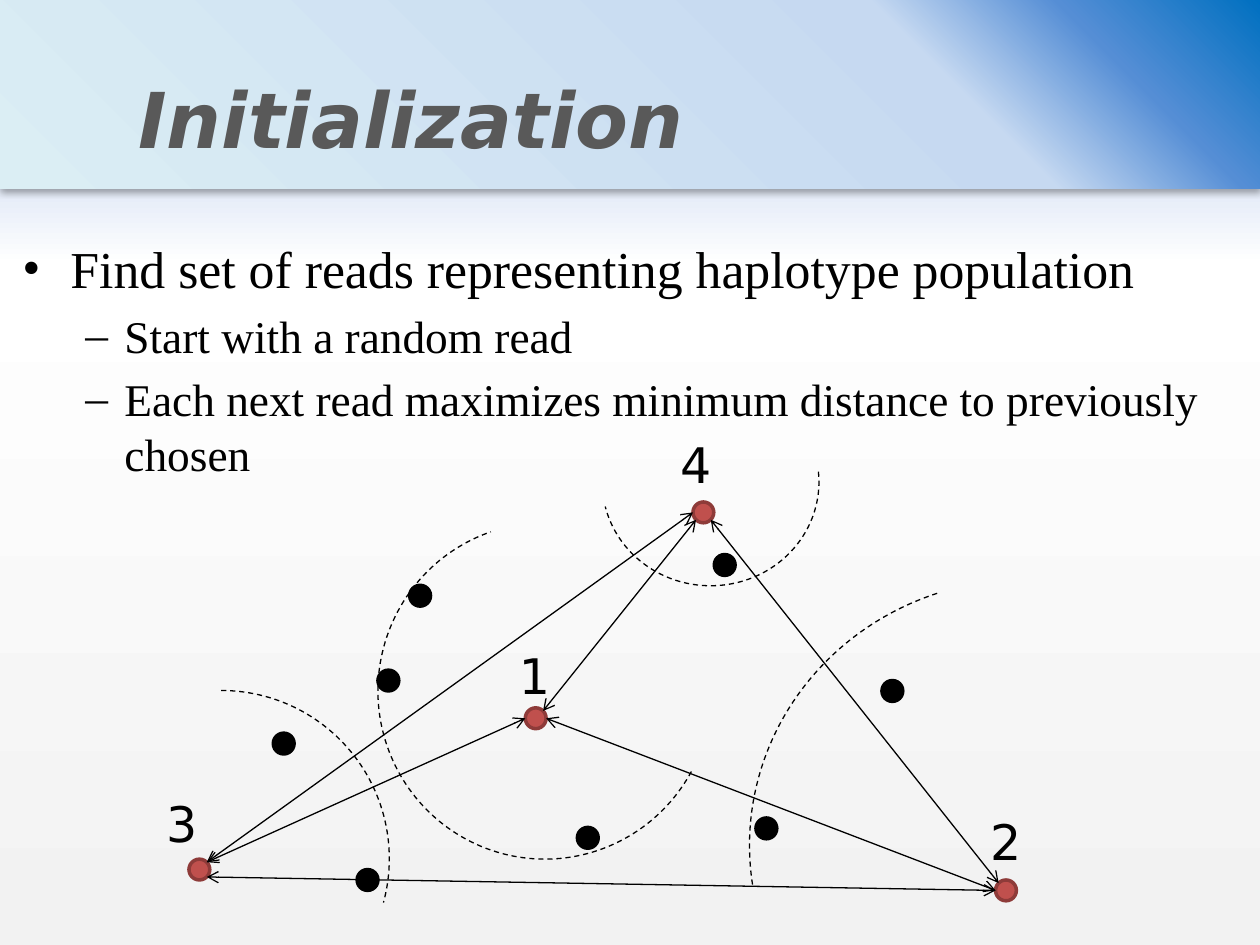
import math
from dataclasses import dataclass

import lxml.etree
import pptx
import pptx.dml.color
import pptx.enum.dml
import pptx.enum.shapes
import pptx.enum.text
import pptx.oxml.ns
import pptx.util

Cm = pptx.util.Cm
Pt = pptx.util.Pt
RGBColor = pptx.dml.color.RGBColor
Shape = pptx.enum.shapes.MSO_SHAPE
qn = pptx.oxml.ns.qn

BLACK = RGBColor(0x00, 0x00, 0x00)
GREY = RGBColor(0x59, 0x59, 0x59)
RED = RGBColor(0xC0, 0x50, 0x4D)
DARK_RED = RGBColor(0x8E, 0x3B, 0x39)
WHITE = RGBColor(0xFF, 0xFF, 0xFF)
PALE_GREY = RGBColor(0xF2, 0xF2, 0xF2)
SKY = RGBColor(0x9A, 0xB5, 0xE4)
DEEP_BLUE = RGBColor(0x00, 0x70, 0xC0)
MID_BLUE = RGBColor(0x55, 0x8E, 0xD5)
LIGHT_BLUE = RGBColor(0xC6, 0xD9, 0xF1)
PALE_BLUE = RGBColor(0xDB, 0xEE, 0xF4)
SANS = "DejaVu Sans"
SERIF = "Times New Roman"
RADIUS = 0.21

BULLETS = [
    ("Find set of reads representing haplotype population", "•", 29.6, 0.97, 0.97),
    ("Start with a random read", "–", 25.9, 2.06, 0.79),
    ("Each next read maximizes minimum distance to previously chosen", "–", 25.9, 2.06, 0.79),
]
CHOSEN = {1: (9.8, 6.88), 2: (19.28, 10.35), 3: (3.02, 9.93), 4: (13.18, 2.73)}
LABELS = {1: (9.21, 5.28), 2: (18.71, 8.63), 3: (2.1, 8.28), 4: (12.46, 1.04)}
READS = [(7.47, 4.41), (4.72, 7.39), (6.83, 6.12), (6.41, 10.14),
         (10.85, 9.29), (13.61, 3.79), (16.99, 6.33), (14.45, 9.1)]
ARCS = [
    (0.07, 6.32, 6.78, 6.78, 270, 15.15),
    (6.62, 2.94, 6.73, 6.78, 28.81, 251.25),
    (11.14, 0.02, 4.37, 4.19, 354.58, 166.81),
    (14.11, 4.08, 11.13, 10.72, 171.8, 251.25),
]
LINKS = [(1, 0, 2, 180), (3, -45, 1, 180), (3, 45, 2, 180),
         (1, -45, 4, 135), (2, -135, 4, 45), (3, -45, 4, 180)]


@dataclass
class Box:
    """A region of the page, in centimetres."""
    left: float
    top: float
    width: float
    height: float

    def inner(self, left, top, width, height):
        """Return the lengths of a part placed relative to this box."""
        return Cm(self.left + left), Cm(self.top + top), Cm(width), Cm(height)


def add_child(parent, tag, **attributes):
    """Append an XML element with the given attributes."""
    values = {key: str(value) for key, value in attributes.items()}
    return lxml.etree.SubElement(parent, qn(tag), values)


def set_gradient(fill, owner, stops, corner=False):
    """Fill with colour stops, downwards or out from the top right corner."""
    fill.gradient()
    gradient = next(owner.iter(qn("a:gradFill")))
    for child in list(gradient):
        gradient.remove(child)
    stop_list = add_child(gradient, "a:gsLst")
    for percent, color in stops:
        stop = add_child(stop_list, "a:gs", pos=percent * 1000)
        add_child(stop, "a:srgbClr", val=color)
    if corner:
        circle = add_child(gradient, "a:path", path="circle")
        add_child(circle, "a:fillToRect", l=100000, b=100000)
    else:
        add_child(gradient, "a:lin", ang=5400000, scaled=0)


def write_text(para, text, size, font, color=BLACK, bold=False, italic=False):
    """Add a formatted span of text to a paragraph."""
    span = para.add_run()
    span.text = text
    span.font.size = Pt(size)
    span.font.name = font
    span.font.color.rgb = color
    span.font.bold = bold
    span.font.italic = italic


def add_title(page, box):
    """Draw the title band with its gradient, shadow and heading."""
    band = page.shapes.add_shape(Shape.RECTANGLE, *box.inner(0, 0, box.width, box.height))
    set_gradient(band.fill, band.element, [
        (0, DEEP_BLUE), (14, MID_BLUE), (27, LIGHT_BLUE), (100, PALE_BLUE)], corner=True)
    band.line.fill.background()
    band.shadow.inherit = False
    effects = band.element.spPr.find(qn("a:effectLst"))
    shadow = add_child(effects, "a:outerShdw", blurRad=Pt(3.5), dist=Pt(2.2),
                       dir=5400000, algn="t", rotWithShape=0)
    color = add_child(shadow, "a:srgbClr", val=BLACK)
    add_child(color, "a:alpha", val=32000)
    frame = band.text_frame
    frame.margin_left = Cm(2.79)
    frame.vertical_anchor = pptx.enum.text.MSO_ANCHOR.MIDDLE
    para = frame.paragraphs[0]
    para.alignment = pptx.enum.text.PP_ALIGN.LEFT
    para.line_spacing = 1.5
    para.space_before = Pt(6)
    write_text(para, "Initialization", 44, SANS, color=GREY, bold=True, italic=True)


def add_bullets(page, box):
    """Write the bulleted steps."""
    frame = page.shapes.add_textbox(*box.inner(0, 0, box.width, box.height)).text_frame
    frame.word_wrap = True
    for index, (text, mark, size, margin, hang) in enumerate(BULLETS):
        para = frame.add_paragraph() if index else frame.paragraphs[0]
        para.level = min(index, 1)
        para.space_before = Pt(round(size * 0.2, 1))
        write_text(para, text, size, SERIF)
        properties = para._p.get_or_add_pPr()
        properties.set("marL", str(Cm(margin)))
        properties.set("indent", str(-Cm(hang)))
        add_child(properties, "a:buFont", typeface=SERIF)
        add_child(properties, "a:buChar", char=mark)


def add_dot(page, box, center, fill, line):
    """Draw one read as a dot around its centre."""
    x, y = center
    dot = page.shapes.add_shape(
        Shape.OVAL, *box.inner(x - RADIUS, y - RADIUS, 2 * RADIUS, 2 * RADIUS))
    dot.fill.solid()
    dot.fill.fore_color.rgb = fill
    dot.line.color.rgb = line
    dot.line.width = Pt(2)
    dot.shadow.inherit = False


def add_arc(page, box, left, top, width, height, start, end):
    """Draw a dashed arc between two angles in degrees."""
    arc = page.shapes.add_shape(Shape.ARC, *box.inner(left, top, width, height))
    arc.adjustments[0] = start * 0.6
    arc.adjustments[1] = end * 0.6
    arc.fill.background()
    arc.line.color.rgb = BLACK
    arc.line.width = Pt(0.75)
    arc.line.dash_style = pptx.enum.dml.MSO_LINE.DASH
    arc.shadow.inherit = False


def rim_point(box, read, angle):
    """Return the page point on the rim of a chosen read at an angle."""
    x, y = CHOSEN[read]
    turn = math.radians(angle)
    return (Cm(box.left + x + RADIUS * math.cos(turn)),
            Cm(box.top + y + RADIUS * math.sin(turn)))


def add_link(page, box, first, first_angle, second, second_angle):
    """Join two chosen reads with a two-headed arrow."""
    link = page.shapes.add_connector(
        pptx.enum.shapes.MSO_CONNECTOR.STRAIGHT,
        *rim_point(box, first, first_angle), *rim_point(box, second, second_angle))
    link.line.color.rgb = BLACK
    link.line.width = Pt(0.75)
    outline = link.line._get_or_add_ln()
    add_child(outline, "a:headEnd", type="arrow")
    add_child(outline, "a:tailEnd", type="arrow")
    add_child(link.element.spPr, "a:effectLst")


def add_diagram(page, box):
    """Draw the reads, the distances between chosen ones and their arcs."""
    for arc in ARCS:
        add_arc(page, box, *arc)
    for center in READS:
        add_dot(page, box, center, BLACK, BLACK)
    for number, center in CHOSEN.items():
        add_dot(page, box, center, RED, DARK_RED)
        label = page.shapes.add_textbox(*box.inner(*LABELS[number], 1.14, 1.45))
        label.text_frame.word_wrap = False
        write_text(label.text_frame.paragraphs[0], str(number), 28, SANS)
    for link in LINKS:
        add_link(page, box, *link)


def main():
    """Build the deck and save it."""
    deck = pptx.Presentation()
    deck.slide_width, deck.slide_height = Cm(25.4), Cm(19.05)
    page = deck.slides.add_slide(deck.slide_layouts[6])
    set_gradient(page.background.fill, page.element,
                 [(0, SKY), (28, WHITE), (100, PALE_GREY)])
    add_title(page, Box(0, 0, 25.4, 3.81))
    add_bullets(page, Box(0.2, 4.65, 24.97, 4.7))
    add_diagram(page, Box(1, 7.6, 24.4, 11.45))
    deck.save("out.pptx")


if __name__ == "__main__":
    main()
